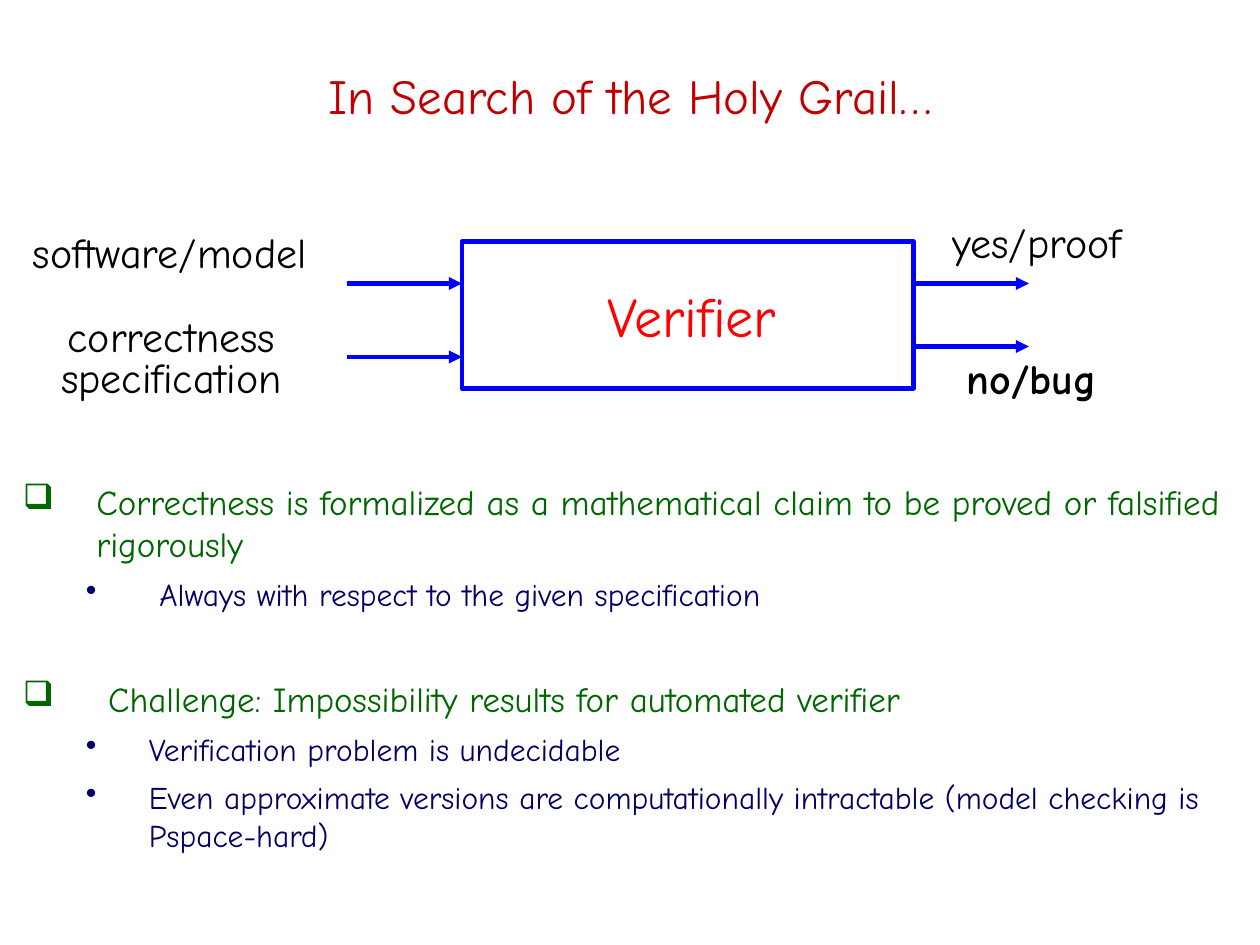
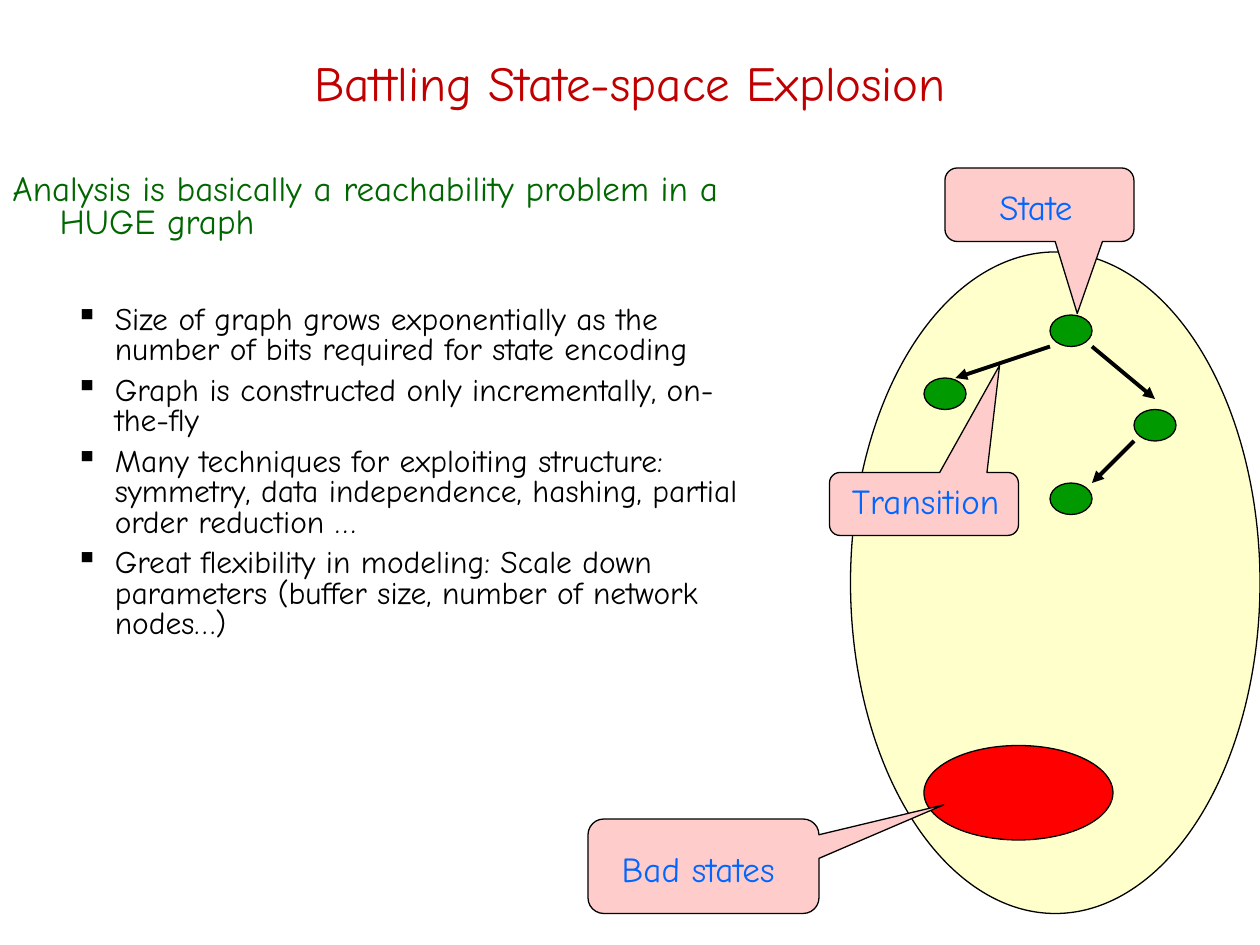
from pptx import Presentation
from pptx.dml.color import RGBColor
from pptx.enum.shapes import MSO_CONNECTOR, MSO_SHAPE
from pptx.enum.text import MSO_ANCHOR, MSO_AUTO_SIZE, PP_ALIGN
from pptx.oxml.ns import qn
from pptx.util import Pt
from lxml.etree import SubElement

FONT = "Comic Neue"
BLACK = RGBColor(0, 0, 0)
RED = RGBColor(0xFF, 0, 0)
TITLE_RED = RGBColor(0xC0, 0, 0)
POINT_GREEN = RGBColor(0, 0x66, 0)
DETAIL_NAVY = RGBColor(0, 0, 0x66)
FLOW_BLUE = RGBColor(0, 0, 0xFF)
LABEL_BLUE = RGBColor(0, 0x66, 0xFF)
SPACE_YELLOW = RGBColor(0xFF, 0xFF, 0xCC)
STATE_GREEN = RGBColor(0, 0x99, 0)
CALLOUT_PINK = RGBColor(0xFF, 0xCC, 0xCC)


def style(paragraph, size, color, bold=False, align=PP_ALIGN.CENTER):
    """Give a whole paragraph its font and alignment."""
    paragraph.alignment = align
    font = paragraph.font
    font.name, font.size, font.bold = FONT, Pt(size), bold
    font.color.rgb = color


def add_title_slide(deck, title, top):
    """Add a slide whose centred title starts at the given height."""
    slide = deck.slides.add_slide(deck.slide_layouts[5])
    heading = slide.shapes.title
    heading.left, heading.top = Pt(0), Pt(top)
    heading.width, heading.height = Pt(720), Pt(48)
    frame = heading.text_frame
    frame.text = title
    frame.auto_size = MSO_AUTO_SIZE.NONE
    frame.vertical_anchor = MSO_ANCHOR.MIDDLE
    style(frame.paragraphs[0], 28, TITLE_RED)
    return slide


def add_outline(slide, box, items, line_spacing=1.0):
    """Write items of (text, size, color, bullet, margin, hanging, space before)."""
    frame = slide.shapes.add_textbox(*map(Pt, box)).text_frame
    frame.word_wrap = True
    for index, (text, size, color, bullet, margin, hanging, before) in enumerate(items):
        paragraph = frame.add_paragraph() if index else frame.paragraphs[0]
        paragraph.text = text
        paragraph.line_spacing = line_spacing
        paragraph.space_before = Pt(before)
        style(paragraph, size, color, align=PP_ALIGN.LEFT)
        properties = paragraph._p.get_or_add_pPr()
        properties.set("marL", str(Pt(margin)))
        properties.set("indent", str(-Pt(hanging)))
        if bullet:
            mark = SubElement(properties, qn("a:buChar"))
            mark.set("char", bullet)
            properties.insert_element_before(mark, "a:tabLst", "a:defRPr")


def add_label(slide, box, lines, bold=False):
    """Centre black lines of text in a box, later lines set tighter."""
    frame = slide.shapes.add_textbox(*map(Pt, box)).text_frame
    frame.word_wrap = False
    frame.vertical_anchor = MSO_ANCHOR.MIDDLE
    frame.text = "\n".join(lines)
    for index, paragraph in enumerate(frame.paragraphs):
        style(paragraph, 24, BLACK, bold)
        if index:
            paragraph.line_spacing = 0.8


def add_arrow(slide, start, end, color, weight):
    """Draw a straight arrow from start to end."""
    arrow = slide.shapes.add_connector(MSO_CONNECTOR.STRAIGHT, *map(Pt, start + end))
    arrow.line.color.rgb = color
    arrow.line.width = Pt(weight)
    SubElement(arrow.line._get_or_add_ln(), qn("a:tailEnd")).set("type", "triangle")
    SubElement(arrow._element.spPr, qn("a:effectLst"))


def add_figure(slide, kind, box, fill=None, line=BLACK, weight=0.75):
    """Draw a flat preset shape."""
    figure = slide.shapes.add_shape(kind, *map(Pt, box))
    figure.shadow.inherit = False
    if fill is None:
        figure.fill.background()
    else:
        figure.fill.solid()
        figure.fill.fore_color.rgb = fill
    figure.line.color.rgb = line
    figure.line.width = Pt(weight)
    return figure


def add_callout(slide, box, text, pointer, inset, nudge):
    """Draw a speech box pointing at a part of the graph."""
    callout = add_figure(slide, MSO_SHAPE.ROUNDED_RECTANGULAR_CALLOUT, box, CALLOUT_PINK)
    for index, value in enumerate(pointer + (0.167,)):
        callout.adjustments[index] = value
    frame = callout.text_frame
    frame.text = text
    frame.vertical_anchor = MSO_ANCHOR.TOP
    frame.margin_top = Pt(inset)
    frame.margin_left, frame.margin_right = Pt(max(0, 2 * nudge)), Pt(max(0, -2 * nudge))
    style(frame.paragraphs[0], 20, LABEL_BLUE)


def add_verifier(slide, box):
    """Draw the verifier with its inputs and outputs around its box."""
    left, top, width, height = box
    verifier = add_figure(slide, MSO_SHAPE.RECTANGLE, box, line=FLOW_BLUE, weight=2.5)
    frame = verifier.text_frame
    frame.text = "Verifier"
    frame.vertical_anchor = MSO_ANCHOR.MIDDLE
    frame.margin_left = Pt(12)
    style(frame.paragraphs[0], 32, RED)
    reach = 66
    for x, drops in ((left - reach, (24, 66)), (left + width, (24, 60))):
        for drop in drops:
            y = top + drop
            add_arrow(slide, (x, y), (x + reach, y), FLOW_BLUE, 2.5)
    add_label(slide, (left - 264, top - 12, 194, 36), ["software/model"])
    add_label(slide, (left - 246, top + 35.5, 160, 60), ["correctness", "specification"])
    add_label(slide, (left + 265, top - 18, 127, 36), ["yes/proof"])
    add_label(slide, (left + 280, top + 60, 91, 36), ["no/bug"], bold=True)


def add_state_space(slide, box):
    """Draw the graph of states, its transitions and callouts in its box."""
    left, top, width, height = box

    def place(x, y, *size):
        """Shift a position into the state space."""
        return (left + x, top + y) + size

    add_figure(slide, MSO_SHAPE.OVAL, box, SPACE_YELLOW)
    add_figure(slide, MSO_SHAPE.OVAL, place(42, 282, 108, 54), RED)
    for x, y in ((114, 36), (42, 72), (162, 90), (114, 132)):
        add_figure(slide, MSO_SHAPE.OVAL, place(x, y, 24, 18), STATE_GREEN)
    for start, end in (((114, 54), (60, 72)), ((138, 54), (174, 84)), ((162, 108), (138, 132))):
        add_arrow(slide, place(*start), place(*end), BLACK, 2.25)
    add_callout(slide, place(54, -48, 108, 42), "State", (0.2, 1.48), 8, -2)
    add_callout(slide, place(-12, 126, 108, 36), "Transition", (0.4, -2.2), 2, 1)
    add_callout(slide, place(-150, 324, 132, 54), "Bad states", (1.04, -0.65), 13.5, -3)


def point(text, before=0, bullet="❑", hanging=42):
    """Describe a green main point."""
    return text, 20, POINT_GREEN, bullet, hanging, hanging, before


def detail(text, before=6):
    """Describe a navy detail under a main point."""
    return text, 18, DETAIL_NAVY, "•", 72, 36, before


def technique(text, before=6):
    """Describe a black remark on the graph."""
    return text, 18, BLACK, "▪", 58.5, 22.5, before


def main():
    """Build both slides and save the deck."""
    deck = Presentation()
    deck.slide_width, deck.slide_height = Pt(720), Pt(540)

    grail = add_title_slide(deck, "In Search of the Holy Grail…", 30)
    add_verifier(grail, (264, 138, 258, 84))
    add_outline(grail, (6, 271, 720, 258), [
        point("Correctness is formalized as a mathematical claim to be proved or falsified rigorously"),
        detail(" Always with respect to the given specification"),
        point(" Challenge: Impossibility results for automated verifier", 37),
        detail("Verification problem is undecidable"),
        detail("Even approximate versions are computationally intractable "
               "(model checking is Pspace-hard)"),
    ])

    explosion = add_title_slide(deck, "Battling State-space Explosion", 23)
    add_outline(explosion, (0, 96, 444, 444), [
        point("Analysis is basically a reachability problem in a HUGE graph",
              bullet=None, hanging=27),
        technique("Size of graph grows exponentially as the number of bits "
                  "required for state encoding", 37),
        technique("Graph is constructed only incrementally, on-the-fly"),
        technique("Many techniques for exploiting structure: symmetry, data independence, "
                  "hashing, partial order reduction …"),
        technique("Great flexibility in modeling: Scale down parameters "
                  "(buffer size, number of network nodes…)"),
    ], line_spacing=0.8)
    add_state_space(explosion, (486, 144, 234, 378))

    deck.save("out.pptx")


if __name__ == "__main__":
    main()
